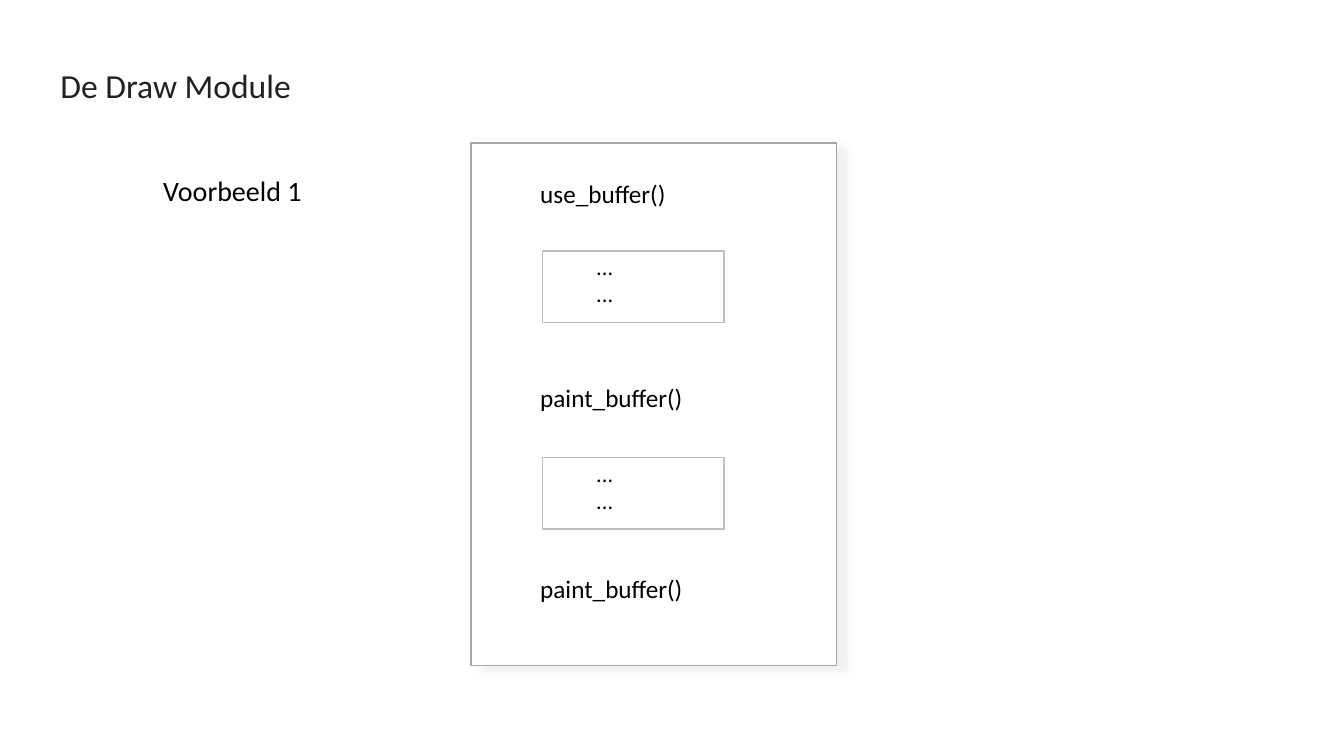
import pptx
import pptx.util
import pptx.dml.color
import pptx.enum.shapes
import pptx.enum.text
import pptx.oxml
import pptx.oxml.ns

PX = 9144  # EMU per px, 100 px to the inch
FONT = "Calibri"
WHITE = pptx.dml.color.RGBColor(0xFF, 0xFF, 0xFF)
BLACK = pptx.dml.color.RGBColor(0x00, 0x00, 0x00)
INK = pptx.dml.color.RGBColor(0x20, 0x21, 0x24)
EDGE = pptx.dml.color.RGBColor(0xA6, 0xA6, 0xA6)
PALE = pptx.dml.color.RGBColor(0xBF, 0xBF, 0xBF)
NS = pptx.oxml.ns.nsdecls("a")
SHADOW = (
    f'<a:effectLst {NS}><a:outerShdw blurRad="95250" dist="96520" dir="1620000" '
    'algn="tl" rotWithShape="0"><a:srgbClr val="000000"><a:alpha val="5000"/>'
    '</a:srgbClr></a:outerShdw></a:effectLst>'
)
ALIGN = pptx.enum.text.PP_ALIGN
ANCHOR = pptx.enum.text.MSO_ANCHOR


def scale(*sizes):
    return [size * PX for size in sizes]


def write(shape, lines, size, color=BLACK, align=ALIGN.LEFT,
          anchor=ANCHOR.TOP, wrap=True):
    frame = shape.text_frame
    frame.word_wrap = wrap
    frame.vertical_anchor = anchor
    for i, line in enumerate(lines):
        para = frame.add_paragraph() if i else frame.paragraphs[0]
        para.alignment = align
        run = para.add_run()
        run.text = line
        run.font.name = FONT
        run.font.size = pptx.util.Pt(size)
        run.font.color.rgb = color


def add_rect(slide, box, fill=None, edge=None):
    rect = slide.shapes.add_shape(
        pptx.enum.shapes.MSO_SHAPE.RECTANGLE, *scale(*box))
    rect.shadow.inherit = False
    if fill is None:
        rect.fill.background()
    else:
        rect.fill.solid()
        rect.fill.fore_color.rgb = fill
    if edge is None:
        rect.line.fill.background()
    else:
        rect.line.color.rgb = edge
        rect.line.width = pptx.util.Pt(1)
    return rect


def add_title(slide, box):
    title = slide.shapes.title
    title.left, title.top, title.width, title.height = scale(*box)
    write(title, ["De Draw Module"], 24, INK)


def add_label(slide, box):
    label = add_rect(slide, box, WHITE)
    color = label.fill._xPr.find(".//" + pptx.oxml.ns.qn("a:srgbClr"))
    color.append(pptx.oxml.parse_xml(f'<a:alpha {NS} val="75000"/>'))
    write(label, ["Voorbeeld 1"], 20, anchor=ANCHOR.MIDDLE)


def add_call(slide, box, name):
    call = slide.shapes.add_textbox(*scale(*box))
    write(call, [name], 18, wrap=False)


def add_block(slide, box):
    left, top, width, height = box
    dots = slide.shapes.add_textbox(*scale(left, top - 3, 80, 64))
    write(dots, ["...", "..."], 16, align=ALIGN.RIGHT,
          anchor=ANCHOR.MIDDLE, wrap=False)
    add_rect(slide, box, edge=PALE)


def add_panel(slide, box):
    left, top, width, height = box
    panel = add_rect(slide, box, WHITE, EDGE)
    props = panel._element.spPr
    props.remove(props.find(pptx.oxml.ns.qn("a:effectLst")))
    props.append(pptx.oxml.parse_xml(SHADOW))
    # Calls, with a block of code after each of the first two
    calls = [("use_buffer()", 30), ("paint_buffer()", 232),
             ("paint_buffer()", 422)]
    for name, down in calls:
        add_call(slide, (left + 59, top + down, 180, 40), name)
    for down in (107, 312):
        add_block(slide, (left + 71, top + down, 180, 71))


def main():
    deck = pptx.Presentation()
    deck.slide_width, deck.slide_height = scale(1333, 750)
    slide = deck.slides.add_slide(deck.slide_layouts[5])
    add_title(slide, (50, 59, 285, 50))
    add_label(slide, (152, 176, 181, 25))
    add_panel(slide, (467, 142, 363, 518))
    deck.save("out.pptx")


if __name__ == "__main__":
    main()
